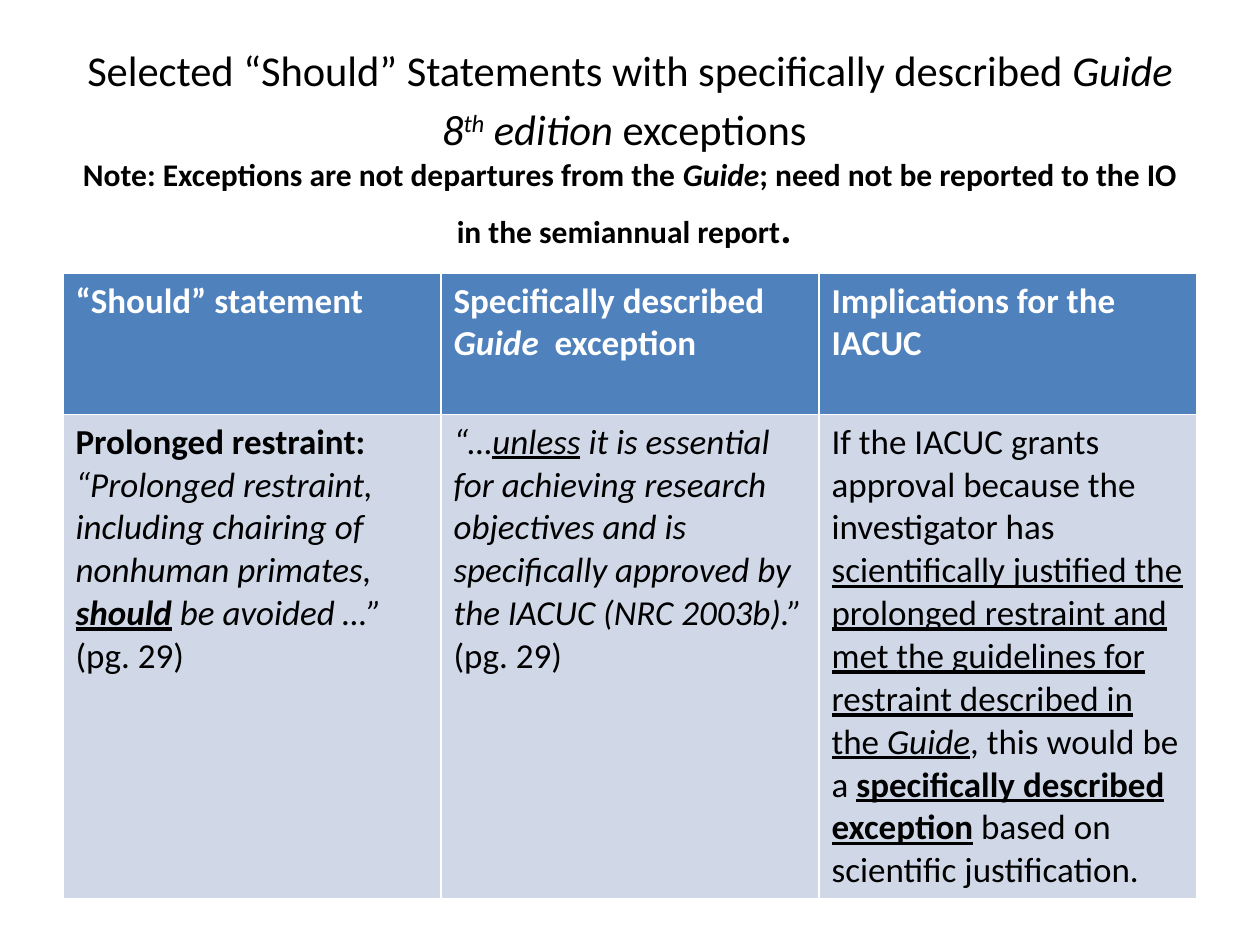
from pptx import Presentation
from pptx import util as u
from pptx.dml.color import RGBColor
from pptx.enum import text

COLORS = {"ink": "000000", "paper": "FFFFFF", "header": "4F81BD", "body": "D0D8E8"}
ITALIC = {"italic": True}
BOLD = {"bold": True}
UNDERLINE = {"underline": True}
BOLD_UNDERLINE = BOLD | UNDERLINE
HEADING = {"size": u.Pt(24.3)}
SPACER = {"size": u.Pt(28.8)}
NOTE = {"size": u.Pt(18), "bold": True}

TITLE_LINES = [
    [
        ("Selected “Should” Statements with specifically described ", HEADING),
        ("Guide 8", HEADING | ITALIC),
        ("th", HEADING | ITALIC | {"baseline": 30}),
        (" edition ", HEADING | ITALIC),
        ("exceptions", HEADING),
        ("\u00a0", SPACER),
    ],
    [
        ("Note: Exceptions are not departures from the ", NOTE),
        ("Guide", NOTE | ITALIC),
        ("; need not be reported to the IO in the semiannual report", NOTE),
        (".", HEADING | BOLD),
        (" ", SPACER),
    ],
]

HEADER_CELLS = [
    [[("“Should” statement", {})]],
    [[("Specifically described ", {}), ("Guide ", ITALIC), (" exception", {})]],
    [[("Implications for the IACUC", {})]],
]

BODY_CELLS = [
    [
        [("Prolonged restraint:", BOLD)],
        [
            ("“Prolonged restraint, including chairing of nonhuman primates, ", ITALIC),
            ("should", ITALIC | BOLD_UNDERLINE),
            (" be avoided …” ", ITALIC),
            ("(pg. 29)", {}),
        ],
    ],
    [[
        ("“…", ITALIC),
        ("unless", ITALIC | UNDERLINE),
        (" it is essential for achieving research objectives and is specifically "
         "approved by the IACUC (NRC 2003b).” ", ITALIC),
        ("(pg. 29)", {}),
    ]],
    [[
        ("If the IACUC grants approval because the investigator has ", {}),
        ("scientifically justified the prolonged restraint and met the guidelines "
         "for restraint described in the ", UNDERLINE),
        ("Guide", ITALIC | UNDERLINE),
        (", this would be a ", {}),
        ("specifically", BOLD_UNDERLINE),
        (" ", UNDERLINE),
        ("described exception", BOLD_UNDERLINE),
        (" based on scientific justification.", {}),
    ]],
]


def add_runs(paragraph, pieces, color, base):
    for content, changes in pieces:
        run = paragraph.add_run()
        run.text = content
        formats = {"name": "Calibri", "bold": False, "italic": False} | base | changes
        baseline = formats.pop("baseline", None)
        for name, value in formats.items():
            setattr(run.font, name, value)
        run.font.color.rgb = RGBColor.from_string(COLORS[color])
        if baseline:
            run.font._element.set("baseline", str(baseline * 1000))


def format_title(title):
    bounds = {"left": 0.5, "top": 0, "width": 9, "height": 2.17}
    for name, value in bounds.items():
        setattr(title, name, u.Inches(value))
    frame_formats = {
        "word_wrap": True,
        "auto_size": text.MSO_AUTO_SIZE.NONE,
        "vertical_anchor": text.MSO_ANCHOR.MIDDLE,
        "margin_top": u.Inches(0.24),
        "margin_bottom": u.Inches(0.05),
    }
    for name, value in frame_formats.items():
        setattr(title.text_frame, name, value)
    paragraph = title.text_frame.paragraphs[0]
    paragraph.alignment = text.PP_ALIGN.CENTER
    for index, line in enumerate(TITLE_LINES):
        if index:
            paragraph.add_line_break()
        add_runs(paragraph, line, "ink", {})


def fill_cell(cell, paragraphs, fill, color, base):
    cell.fill.solid()
    cell.fill.fore_color.rgb = RGBColor.from_string(COLORS[fill])
    frame = cell.text_frame
    for index, pieces in enumerate(paragraphs):
        paragraph = frame.add_paragraph() if index else frame.paragraphs[0]
        add_runs(paragraph, pieces, color, {"size": u.Pt(20)} | base)


def add_statement_table(slide):
    frame = slide.shapes.add_table(
        2, 3, u.Inches(0.5), u.Inches(2.17), u.Inches(9), u.Inches(4.95))
    table = frame.table
    for row, height in zip(table.rows, (1.12, 3.83)):
        row.height = u.Inches(height)
    for column, (header, body) in enumerate(zip(HEADER_CELLS, BODY_CELLS)):
        table.columns[column].width = u.Inches(3)
        fill_cell(table.cell(0, column), header, "header", "paper", BOLD)
        fill_cell(table.cell(1, column), body, "body", "ink", {})


def main():
    presentation = Presentation()
    presentation.slide_width = u.Inches(10)
    presentation.slide_height = u.Inches(7.5)
    slide = presentation.slides.add_slide(presentation.slide_layouts[5])
    format_title(slide.shapes.title)
    add_statement_table(slide)
    presentation.save("out.pptx")


if __name__ == "__main__":
    main()
